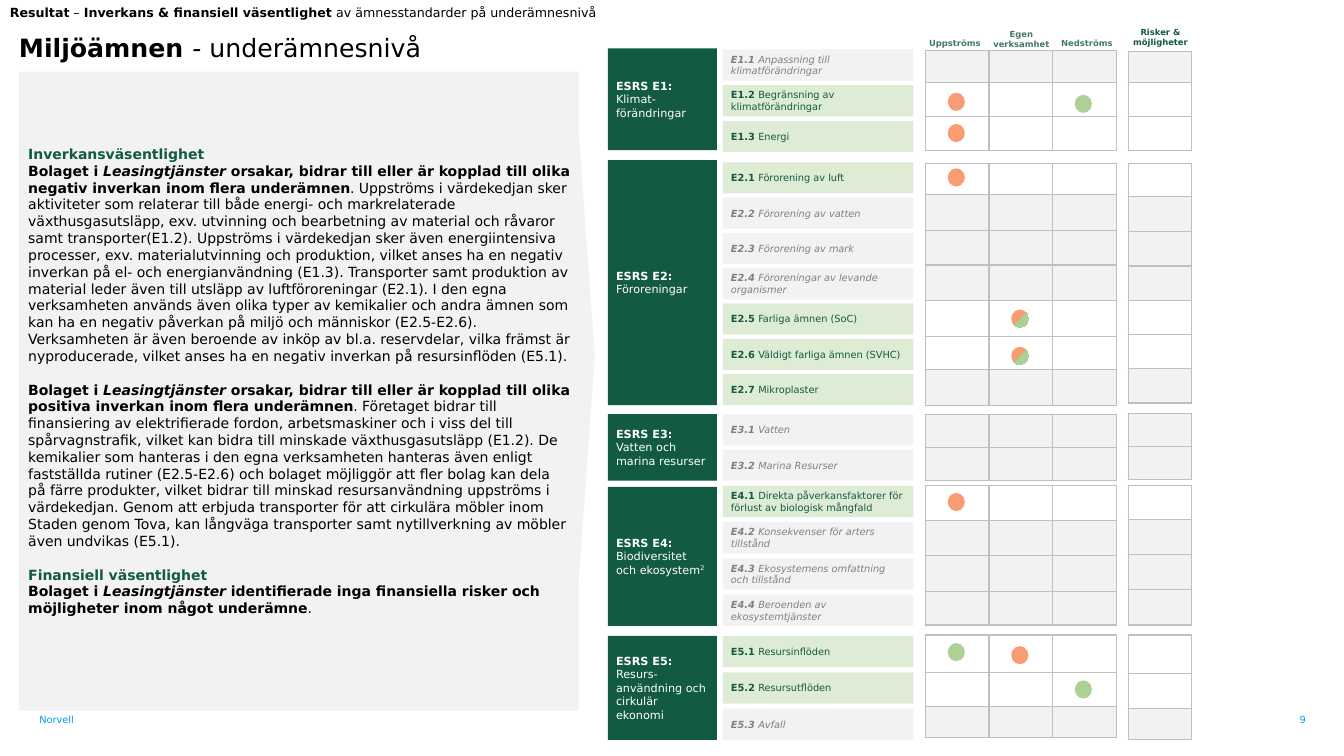
from dataclasses import dataclass
from typing import NamedTuple

from lxml.etree import SubElement
from pptx import Presentation
from pptx.dml.color import RGBColor as Rgb
from pptx.enum.shapes import MSO_SHAPE as Kind
from pptx.enum.text import MSO_ANCHOR as Anchor, PP_ALIGN as Align
from pptx.oxml.ns import qn
from pptx.util import Inches, Pt

HEX = {
    "dark": "125A40", "head": "417B66", "pale": "DEECD5", "light": "F2F2F2",
    "grey": "808080", "edge": "BFBFBF", "white": "FFFFFF", "black": "000000",
    "blue": "009DF0", "neg": "F89D73", "pos": "ADD095",
}
PAD = (0.08, 0.04, 0.08, 0.04)
NONE = (0, 0, 0, 0)
COL = 0.63
LEFT = 9.18


class Run(NamedTuple):
    text: str
    bold: bool = False
    italic: bool = False
    raised: bool = False


class Para(NamedTuple):
    runs: list[Run]
    color: str = "black"
    before: float = 0


class Item(NamedTuple):
    name: str
    green: bool = False
    live: bool = False


@dataclass
class Topic:
    code: str
    name: str
    box: tuple[float, float]
    top: float
    step: float
    items: list[Item]
    chain: tuple[float, list[float]]
    risk: tuple[float, list[float]]
    note: str = ""


class Dot(NamedTuple):
    col: int
    top: float
    kind: str


class Head(NamedTuple):
    text: str
    left: float
    top: float
    color: str = "head"


TOPICS = [
    Topic("E1", "Klimat-förändringar", (0.48, 1.01), 0.49, 0.355, [
        Item("Anpassning till klimatförändringar"),
        Item("Begränsning av klimatförändringar", True, True),
        Item("Energi", True, True)],
        (0.5, [0.32, 0.34, 0.33]), (0.51, [0.31, 0.34, 0.33])),
    Topic("E2", "Föroreningar", (1.59, 2.43), 1.61, 0.35, [
        Item("Förorening av luft", True, True),
        Item("Förorening av vatten"),
        Item("Förorening av mark"),
        Item("Föroreningar av levande organismer"),
        Item("Farliga ämnen (SoC)", True, True),
        Item("Väldigt farliga ämnen (SVHC)", True, True),
        Item("Mikroplaster", True)],
        (1.62, [0.31, 0.36, 0.34, 0.35, 0.36, 0.33, 0.35]),
        (1.62, [0.33, 0.35] + [0.34] * 5)),
    Topic("E3", "Vatten och marina resurser", (4.11, 0.66), 4.11, 0.35, [
        Item("Vatten"), Item("Marina Resurser")],
        (4.11, [0.33] * 2), (4.1, [0.33] * 2)),
    Topic("E4", "Biodiversitet och ekosystem", (4.83, 1.38), 4.82, 0.36, [
        Item("Direkta påverkansfaktorer för förlust av biologisk mångfald", True, True),
        Item("Konsekvenser för arters tillstånd"),
        Item("Ekosystemens omfattning och tillstånd"),
        Item("Beroenden av ekosystemtjänster")],
        (4.82, [0.34, 0.35, 0.36, 0.33]), (4.82, [0.33] + [0.35] * 3), "2"),
    Topic("E5", "Resurs-användning och cirkulär ekonomi", (6.31, 1.03), 6.31, 0.36, [
        Item("Resursinflöden", True, True),
        Item("Resursutflöden", True, True),
        Item("Avfall")],
        (6.3, [0.37, 0.34, 0.31]), (6.3, [0.38, 0.35, 0.31])),
]

DOTS = [
    Dot(0, 0.92, "neg"), Dot(2, 0.94, "pos"), Dot(0, 1.23, "neg"),
    Dot(0, 1.67, "neg"), Dot(1, 3.07, "both"), Dot(1, 3.44, "both"),
    Dot(0, 4.89, "neg"), Dot(0, 6.38, "pos"), Dot(1, 6.41, "neg"),
    Dot(2, 6.75, "pos"),
]

HEADS = [
    Head("Uppströms", 9.12, 0.38), Head("Egen verksamhet", 9.78, 0.29),
    Head("Nedströms", 10.43, 0.38), Head("Risker & möjligheter", 11.16, 0.27, "dark"),
]

FIRM = [Run("Bolaget i ", True), Run("Leasingtjänster ", True, True)]
STORY = [
    Para([Run("Inverkansväsentlighet", True)], "dark"),
    Para(FIRM + [
        Run("orsakar, bidrar till eller är kopplad till olika negativ inverkan inom flera underämnen", True),
        Run(". Uppströms i värdekedjan sker aktiviteter som relaterar till både energi- och markrelaterade "
            "växthusgasutsläpp, exv. utvinning och bearbetning av material och råvaror samt transporter(E1.2). "
            "Uppströms i värdekedjan sker även energiintensiva processer, exv. materialutvinning och produktion, "
            "vilket anses ha en negativ inverkan på el- och energianvändning (E1.3). Transporter samt produktion "
            "av material leder även till utsläpp av luftföroreningar (E2.1). I den egna verksamheten används även "
            "olika typer av kemikalier och andra ämnen som kan ha en negativ påverkan på miljö och människor "
            "(E2.5-E2.6). Verksamheten är även beroende av inköp av bl.a. reservdelar, vilka främst är "
            "nyproducerade, vilket anses ha en negativ inverkan på resursinflöden (E5.1).")]),
    Para(FIRM + [
        Run("orsakar, bidrar till eller är kopplad till olika positiva inverkan inom flera underämnen", True),
        Run(". Företaget bidrar till finansiering av elektrifierade fordon, arbetsmaskiner och i viss del till "
            "spårvagnstrafik, vilket kan bidra till minskade växthusgasutsläpp (E1.2). De kemikalier som hanteras "
            "i den egna verksamheten hanteras även enligt fastställda rutiner (E2.5-E2.6) och bolaget möjliggör "
            "att fler bolag kan dela på färre produkter, vilket bidrar till minskad resursanvändning uppströms i "
            "värdekedjan. Genom att erbjuda transporter för att cirkulära möbler inom Staden genom Tova, kan "
            "långväga transporter samt nytillverkning av möbler även undvikas (E5.1).")], before=12),
    Para([Run("Finansiell väsentlighet", True)], "dark", 12),
    Para(FIRM + [
        Run("identifierade inga finansiella risker och möjligheter inom något underämne", True), Run(".")]),
]


def tint(name: str) -> Rgb:
    return Rgb.from_string(HEX[name])


def write(shape, paras: list[Para], size: float, pad=PAD, align=Align.LEFT, anchor=Anchor.MIDDLE) -> None:
    frame = shape.text_frame
    left, top, right, low = map(Inches, pad)
    form = {"word_wrap": True, "vertical_anchor": anchor, "margin_left": left,
            "margin_top": top, "margin_right": right, "margin_bottom": low}
    for key, val in form.items():
        setattr(frame, key, val)
    for num, para in enumerate(paras):
        line = frame.add_paragraph() if num else frame.paragraphs[0]
        line.alignment = align
        if para.before:
            line.space_before = Pt(para.before)
        for part in para.runs:
            run = line.add_run()
            run.text = part.text
            style = {"name": "DejaVu Sans", "size": Pt(size), "bold": part.bold, "italic": part.italic}
            for key, val in style.items():
                setattr(run.font, key, val)
            run.font.color.rgb = tint(para.color)
            if part.raised:
                run._r.get_or_add_rPr().set("baseline", "30000")


def label(slide, box: tuple, paras: list[Para], size: float, **form) -> None:
    write(slide.shapes.add_textbox(*map(Inches, box)), paras, size, **form)


def block(slide, box: tuple, fill: str, kind=Kind.RECTANGLE):
    shape = slide.shapes.add_shape(kind, *map(Inches, box))
    shape.shadow.inherit = False
    shape.line.fill.background()
    if fill == "both":
        shape.fill.gradient()
        shape.fill.gradient_angle = 315
        for stop, name, pos in zip(shape.fill.gradient_stops, ("neg", "pos"), (0.5, 0.54)):
            stop.color.rgb, stop.position = tint(name), pos
    else:
        shape.fill.solid()
        shape.fill.fore_color.rgb = tint(fill)
    return shape


def edge(cell) -> None:
    """Put a thin line on all four sides; must come before the fill."""
    props = cell._tc.get_or_add_tcPr()
    for side in ("lnL", "lnR", "lnT", "lnB"):
        line = SubElement(props, qn(f"a:{side}"), w=str(Pt(1)))
        SubElement(SubElement(line, qn("a:solidFill")), qn("a:srgbClr"), val=HEX["edge"])


def grid(slide, left: float, top: float, rows: list[float], cols: int, items: list[Item]) -> None:
    area = map(Inches, (left, top, COL * cols, sum(rows)))
    table = slide.shapes.add_table(len(rows), cols, *area).table
    table.first_row = table.horz_banding = False
    for col in table.columns:
        col.width = Inches(COL)
    for row, tall, item in zip(table.rows, rows, items):
        row.height = Inches(tall)
        for cell in row.cells:
            for side in ("left", "top", "right", "bottom"):
                setattr(cell, f"margin_{side}", 0)
            edge(cell)
            cell.fill.solid()
            cell.fill.fore_color.rgb = tint("white" if item.live else "light")


def draw(slide, topic: Topic) -> None:
    top, tall = topic.box
    runs = [Run(f"ESRS {topic.code}: ", True), Run(topic.name)]
    if topic.note:
        runs.append(Run(topic.note, raised=True))
    write(block(slide, (6.03, top, 1.08, tall), "dark"), [Para(runs, "white")], 8)
    for num, item in enumerate(topic.items):
        box = (7.17, topic.top + topic.step * num, 1.89, 0.31)
        slant = not item.green
        runs = [Run(f"{topic.code}.{num + 1} ", True, slant), Run(item.name, False, slant)]
        shape = block(slide, box, "pale" if item.green else "light")
        write(shape, [Para(runs, "dark" if item.green else "grey")], 7)
    grid(slide, LEFT, *topic.chain, 3, topic.items)
    grid(slide, 11.19, *topic.risk, 1, topic.items)


def main() -> None:
    deck = Presentation()
    deck.slide_width, deck.slide_height = Inches(13.33), Inches(7.5)
    slide = deck.slides.add_slide(deck.slide_layouts[6])
    free = {"pad": (0.1, 0.05, 0.1, 0.05), "anchor": Anchor.TOP}
    foot = {"pad": NONE, "anchor": Anchor.BOTTOM}

    label(slide, (0.39, 6.96, 0.85, 0.24), [Para([Run("Norvell")], "blue")], 7, **foot)
    label(slide, (12.26, 7.08, 0.69, 0.12), [Para([Run("9")], "blue")], 7, align=Align.RIGHT, **foot)
    label(slide, (0, 0, 8.11, 0.25), [Para([
        Run("Resultat", True), Run(" – "), Run("Inverkans & finansiell väsentlighet ", True),
        Run("av ämnesstandarder på underämnesnivå")])], 9, **free)
    block(slide, (0.19, 0.71, 5.55, 6.34), "light")
    block(slide, (3.33, 3.45, 4.96, 0.18), "light", Kind.ISOSCELES_TRIANGLE).rotation = 90
    label(slide, (0.09, 0.27, 5.03, 0.4), [Para([
        Run("Miljöämnen ", True), Run("- underämnesnivå")])], 18, **free)
    write(block(slide, (0.2, 0.83, 5.52, 6.07), "light"), STORY, 10, pad=(0.08, 0.04, 0.06, 0.21))

    for topic in TOPICS:
        draw(slide, topic)
    for head in HEADS:
        label(slide, (head.left, head.top, 0.7, 0.2), [Para([Run(head.text, True)], head.color)], 6,
              pad=NONE, align=Align.CENTER, anchor=Anchor.TOP)
    for dot in DOTS:
        block(slide, (9.4 + COL * dot.col, dot.top, 0.17, 0.18), dot.kind, Kind.OVAL)
    deck.save("out.pptx")


if __name__ == "__main__":
    main()
